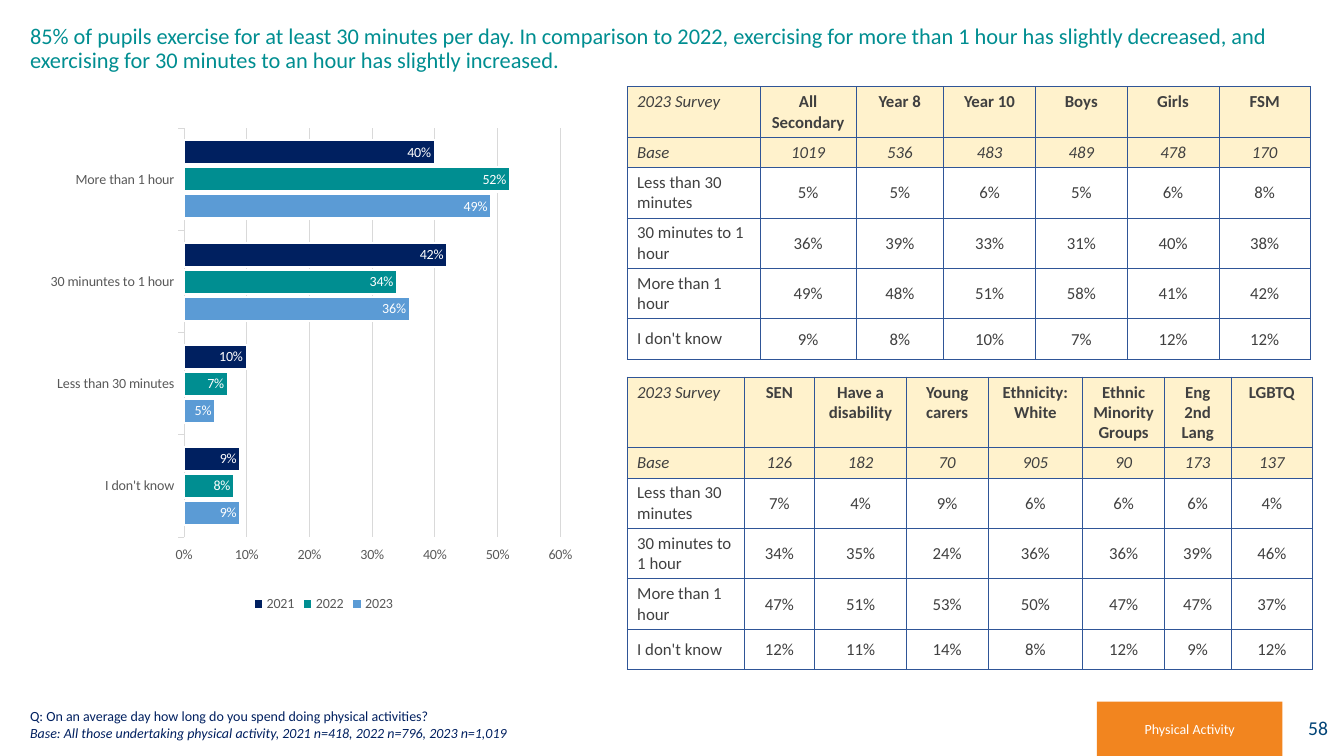
"""Build the slide on how long pupils exercise per day."""
import lxml.etree
import pptx
import pptx.chart.data
import pptx.dml.color
import pptx.enum.chart
import pptx.enum.shapes
import pptx.enum.text
import pptx.oxml
import pptx.oxml.ns
import pptx.util

Inches = pptx.util.Inches
Pt = pptx.util.Pt
RGBColor = pptx.dml.color.RGBColor
ALIGN = pptx.enum.text.PP_ALIGN
ANCHOR = pptx.enum.text.MSO_ANCHOR
CHART = pptx.enum.chart

TEAL = RGBColor(0x00, 0x8E, 0x91)
NAVY = RGBColor(0x00, 0x20, 0x60)
BLUE = RGBColor(0x5B, 0x9B, 0xD5)
PAGE_BLUE = RGBColor(0x00, 0x43, 0x76)
ORANGE = RGBColor(0xF2, 0x85, 0x1F)
CREAM = RGBColor(0xFF, 0xF2, 0xCC)
BORDER = RGBColor(0x2F, 0x55, 0x97)
DARK = RGBColor(0x40, 0x40, 0x40)
GREY = RGBColor(0x59, 0x59, 0x59)
LIGHT = RGBColor(0xD9, 0xD9, 0xD9)
WHITE = RGBColor(0xFF, 0xFF, 0xFF)


def set_font(font, color, **values):
    """Apply the font colour and a dict of font values."""
    font.color.rgb = color
    for name, value in {"name": "Calibri", **values}.items():
        setattr(font, name, value)


def set_text(tf, lines, color, size, align=ALIGN.LEFT, anchor=ANCHOR.TOP):
    """Fill a text frame with (text, italic) lines and return its paragraphs."""
    for name, value in {"word_wrap": True, "vertical_anchor": anchor}.items():
        setattr(tf, name, value)
    for i, (text, italic) in enumerate(lines):
        p = tf.add_paragraph() if i else tf.paragraphs[0]
        p.alignment = align
        r = p.add_run()
        r.text = text
        set_font(r.font, color, size=Pt(size), italic=italic)
    return tf.paragraphs


prs = pptx.Presentation()
prs.slide_width, prs.slide_height = Inches(13.33), Inches(7.5)
s = prs.slides.add_slide(prs.slide_layouts[6])

blocks = [
    ((12.68, 6.95, 0.59, 0.54), WHITE, "58", PAGE_BLUE, 14, ALIGN.RIGHT),
    ((10.88, 6.96, 1.84, 0.54), ORANGE, "Physical Activity", WHITE, 10, ALIGN.CENTER),
]
for box, fill, text, color, size, align in blocks:
    sp = s.shapes.add_shape(pptx.enum.shapes.MSO_SHAPE.RECTANGLE, *map(Inches, box))
    sp.shadow.inherit = False
    sp.fill.solid()
    sp.fill.fore_color.rgb = fill
    sp.line.fill.background()
    set_text(sp.text_frame, [(text, False)], color, size, align, ANCHOR.MIDDLE)

title = s.shapes.add_textbox(*map(Inches, (0.2, 0.2, 12.82, 0.98)))
title_text = (
    "85% of pupils exercise for at least 30 minutes per day. In comparison to 2022, "
    "exercising for more than 1 hour has slightly decreased, and exercising for "
    "30 minutes to an hour has slightly increased."
)
set_text(title.text_frame, [(title_text, False)], TEAL, 16)[0].line_spacing = 0.9

note = s.shapes.add_textbox(*map(Inches, (0.2, 6.96, 8.79, 0.44)))
note_lines = [
    ("Q: On an average day how long do you spend doing physical activities?", False),
    ("Base: All those undertaking physical activity, 2021 n=418, 2022 n=796, 2023 n=1,019", True),
]
set_text(note.text_frame, note_lines, NAVY, 10, anchor=ANCHOR.BOTTOM)

data = pptx.chart.data.CategoryChartData(number_format="0%")
data.categories = ["I don't know", "Less than 30 minutes", "30 minuntes to 1 hour", "More than 1 hour"]
years = [
    ("2023", (0.09, 0.05, 0.36, 0.49), BLUE),
    ("2022", (0.08, 0.07, 0.34, 0.52), TEAL),
    ("2021", (0.09, 0.1, 0.42, 0.4), NAVY),
]
for year, values, color in years:
    data.add_series(year, values)
chart = s.shapes.add_chart(
    CHART.XL_CHART_TYPE.BAR_CLUSTERED, *map(Inches, (0.2, 0.91, 6.02, 5.2)), data
).chart
chart.has_title = False
chart.has_legend = True
legend = chart.legend
legend.position = CHART.XL_LEGEND_POSITION.BOTTOM
legend.include_in_layout = False

cat_axis, val_axis = chart.category_axis, chart.value_axis
for part in (chart, legend):
    set_font(part.font, GREY, size=Pt(10))
for axis in (cat_axis, val_axis):
    set_font(axis.tick_labels.font, GREY, size=Pt(10))
    axis.major_tick_mark = CHART.XL_TICK_MARK.OUTSIDE
    axis.minor_tick_mark = CHART.XL_TICK_MARK.NONE
cat_axis.has_major_gridlines = False
val_axis.has_major_gridlines = True
for line in (cat_axis.format.line, val_axis.major_gridlines.format.line):
    line.color.rgb = LIGHT
    line.width = Pt(0.75)
val_axis.format.line.fill.background()
for name, value in {"minimum_scale": 0, "maximum_scale": 0.6, "major_unit": 0.1}.items():
    setattr(val_axis, name, value)
val_axis.tick_labels.number_format = "0%"
val_axis.tick_labels.number_format_is_linked = False

plot = chart.plots[0]
for name, value in {"gap_width": 100, "overlap": -12, "vary_by_categories": False}.items():
    setattr(plot, name, value)
for ser, (year, values, color) in zip(plot.series, years):
    ser.invert_if_negative = False
    ser.format.fill.solid()
    ser.format.fill.fore_color.rgb = color
    ser.format.line.color.rgb = WHITE
    ser.format.line.width = Pt(1.5)
    labels = ser.data_labels
    set_font(labels.font, WHITE, size=Pt(10))
    label_format = {
        "show_value": True,
        "position": CHART.XL_LABEL_POSITION.INSIDE_END,
        "number_format": "0%",
        "number_format_is_linked": False,
    }
    for name, value in label_format.items():
        setattr(labels, name, value)

qn = pptx.oxml.ns.qn
plot_area = chart.element.find(".//" + qn("c:plotArea"))
for old in plot_area.findall(qn("c:layout")):
    plot_area.remove(old)
layout = lxml.etree.Element(qn("c:layout"))
manual = lxml.etree.SubElement(layout, qn("c:manualLayout"))
plot_layout = {
    "layoutTarget": "inner", "xMode": "edge", "yMode": "edge",
    "x": "0.27", "y": "0.07", "w": "0.62", "h": "0.78",
}
for name, value in plot_layout.items():
    lxml.etree.SubElement(manual, qn("c:" + name), val=value)
plot_area.insert(0, layout)

answers = ["2023 Survey", "Base", "Less than 30 minutes", "30 minutes to 1 hour", "More than 1 hour", "I don't know"]
tables = [
    (0.86, 0.5, [1.32, 0.95, 0.87, 0.91, 0.91, 0.91, 0.91], [
        ["All Secondary", "Year 8", "Year 10", "Boys", "Girls", "FSM"],
        ["1019", "536", "483", "489", "478", "170"],
        ["5%", "5%", "6%", "5%", "6%", "8%"],
        ["36%", "39%", "33%", "31%", "40%", "38%"],
        ["49%", "48%", "51%", "58%", "41%", "42%"],
        ["9%", "8%", "10%", "7%", "12%", "12%"],
    ]),
    (3.74, 0.7, [1.16, 0.7, 0.91, 0.81, 0.94, 0.81, 0.66, 0.81], [
        ["SEN", "Have a disability", "Young carers", "Ethnicity: White",
         "Ethnic Minority Groups", "Eng 2nd Lang", "LGBTQ"],
        ["126", "182", "70", "905", "90", "173", "137"],
        ["7%", "4%", "9%", "6%", "6%", "6%", "4%"],
        ["34%", "35%", "24%", "36%", "36%", "39%", "46%"],
        ["47%", "51%", "53%", "50%", "47%", "47%", "37%"],
        ["12%", "11%", "14%", "8%", "12%", "9%", "12%"],
    ]),
]
for top, header_height, widths, rows in tables:
    heights = [header_height, 0.3, 0.5, 0.5, 0.5, 0.4]
    box = (6.22, top, sum(widths), sum(heights))
    table = s.shapes.add_table(len(rows), len(widths), *map(Inches, box)).table
    table.first_row = table.horz_banding = False
    for column, width in zip(table.columns, widths):
        column.width = Inches(width)
    for i, (answer, row) in enumerate(zip(answers, rows)):
        table.rows[i].height = Inches(heights[i])
        for j, text in enumerate([answer] + row):
            cell = table.cell(i, j)
            tc_pr = cell._tc.get_or_add_tcPr()
            for side in ("lnL", "lnR", "lnT", "lnB"):
                ln = lxml.etree.SubElement(tc_pr, qn("a:" + side), w=str(Pt(0.5)))
                solid = lxml.etree.SubElement(ln, qn("a:solidFill"))
                lxml.etree.SubElement(solid, qn("a:srgbClr"), val=str(BORDER))
            if i < 2:
                cell.fill.solid()
                cell.fill.fore_color.rgb = CREAM
            else:
                cell.fill.background()
            if i > 1 and j:
                for side in ("left", "top", "right"):
                    setattr(cell, "margin_" + side, Inches(0.01))
                cell.margin_bottom = 0
            cell.vertical_anchor = ANCHOR.MIDDLE if i else ANCHOR.TOP
            p = cell.text_frame.paragraphs[0]
            p.alignment = ALIGN.CENTER if j else ALIGN.LEFT
            r = p.add_run()
            r.text = text
            italic = i == 1 or (i == 0 and j == 0)
            set_font(r.font, DARK, size=Pt(12), bold=i == 0 and j > 0, italic=italic)

prs.save("out.pptx")
